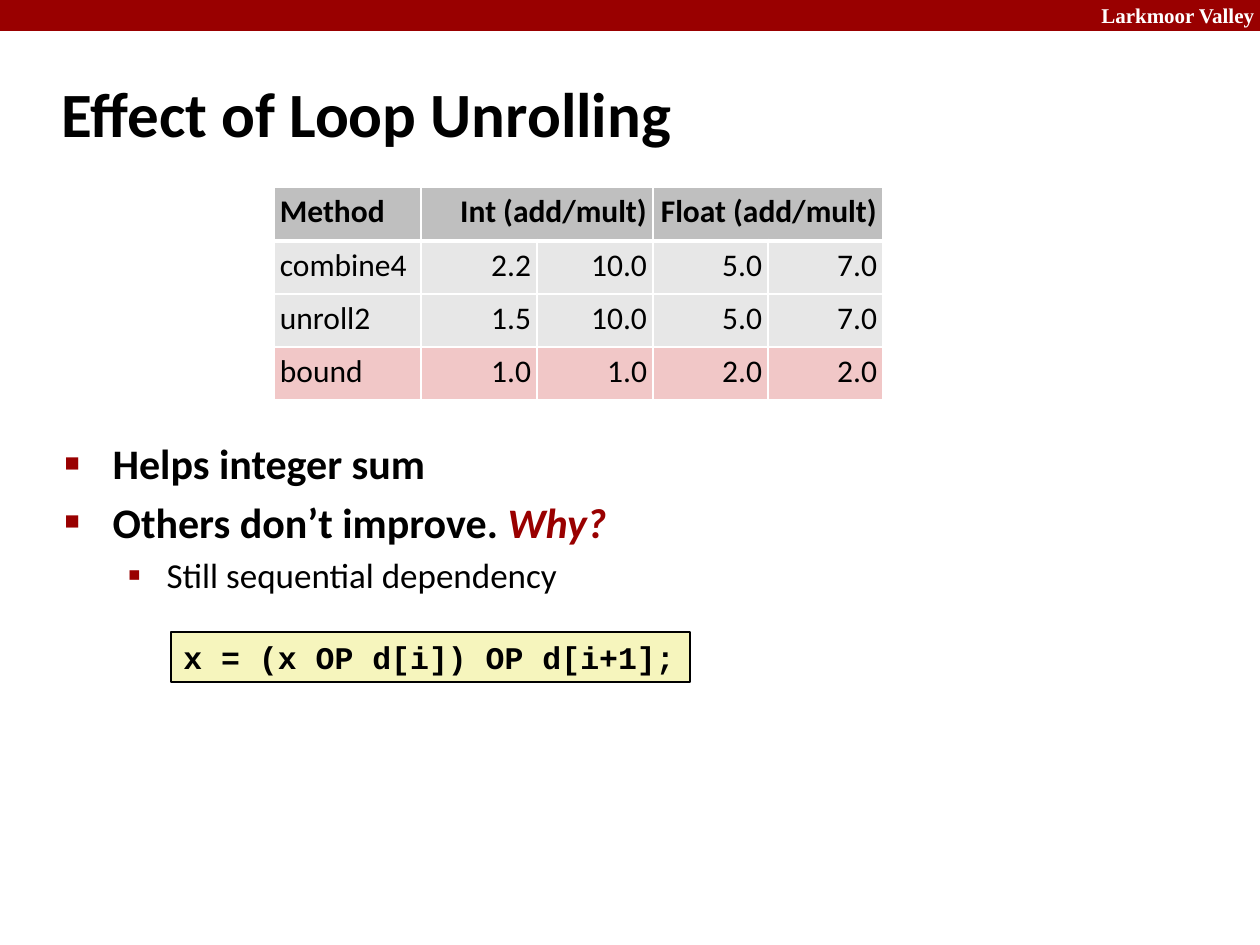
"""Build the slide on the effect of loop unrolling."""
from dataclasses import dataclass

from lxml.etree import SubElement
from pptx import Presentation
from pptx.dml.color import RGBColor
from pptx.enum.shapes import MSO_SHAPE
from pptx.enum.text import MSO_ANCHOR, MSO_AUTO_SIZE, PP_ALIGN
from pptx.oxml import parse_xml
from pptx.oxml.ns import nsdecls, qn
from pptx.util import Emu, Pt

PX = 914400 // 126


@dataclass(frozen=True)
class Theme:
    accent: str = "990000"
    ink: str = "000000"
    paper: str = "FFFFFF"
    header: str = "BFBFBF"
    row: str = "E7E7E7"
    bound: str = "F1C7C7"
    code: str = "F6F5BD"
    sans: str = "Calibri"
    mono: str = "Courier New"
    serif: str = "Times New Roman"
    title_size: int = 36
    point_size: int = 24
    detail_size: int = 20
    table_size: int = 18
    code_size: int = 18
    brand_size: int = 12


THEME = Theme()

BRAND = "Larkmoor Valley"
TITLE = "Effect of Loop Unrolling"
CODE = "x = (x OP d[i]) OP d[i+1];"
HEADINGS = [(0, 0, "Method"), (1, 2, "Int (add/mult)"), (3, 4, "Float (add/mult)")]
ROWS = [
    ("combine4", "2.2", "10.0", "5.0", "7.0"),
    ("unroll2", "1.5", "10.0", "5.0", "7.0"),
    ("bound", "1.0", "1.0", "2.0", "2.0"),
]
POINTS = [
    (0, "Helps integer sum", ""),
    (0, "Others don’t improve. ", "Why?"),
    (1, "Still sequential dependency", ""),
]
LEVELS = [
    dict(size=THEME.point_size, bold=True, margin=48, hang=48, bullet="■", scale=60),
    dict(size=THEME.detail_size, bold=False, margin=102, hang=39, bullet="▪", scale=110),
]
COLUMN_WIDTHS = [147, 116, 116, 115, 115]
ROW_HEIGHTS = [54, 53, 53, 53]


def px(*lengths):
    return [Emu(length * PX) for length in lengths]


def color(code):
    return RGBColor.from_string(code)


def style(para, face, size, ink=THEME.ink, bold=True, align=PP_ALIGN.LEFT):
    para.alignment = align
    font = para.font
    font.name, font.size, font.bold = face, Pt(size), bold
    font.color.rgb = color(ink)


def place(shape, left, top, width, height):
    shape.left, shape.top, shape.width, shape.height = px(left, top, width, height)


def add_rectangle(page, bounds, fill):
    box = page.shapes.add_shape(MSO_SHAPE.RECTANGLE, *px(*bounds))
    box.shadow.inherit = False
    box.fill.solid()
    box.fill.fore_color.rgb = color(fill)
    box.line.fill.background()
    return box


def add_banner(page):
    add_rectangle(page, (0, 0, 1260, 31), THEME.accent)
    box = page.shapes.add_textbox(*px(1089, -4, 180, 38))
    box.text_frame.word_wrap = True
    box.text_frame.text = BRAND
    style(box.text_frame.paragraphs[0], THEME.serif, THEME.brand_size, THEME.paper)


def fill_title(title):
    place(title, 49, 60, 1046, 105)
    frame = title.text_frame
    frame.text = TITLE
    frame.auto_size = MSO_AUTO_SIZE.NONE
    frame.vertical_anchor = MSO_ANCHOR.MIDDLE
    style(frame.paragraphs[0], THEME.sans, THEME.title_size)


def set_bullet(para, level):
    props = para._p.get_or_add_pPr()
    margin, hang = px(level["margin"], level["hang"])
    props.set("marL", str(margin))
    props.set("indent", str(-hang))
    tint = SubElement(props, qn("a:buClr"))
    SubElement(tint, qn("a:srgbClr"), val=THEME.accent)
    SubElement(props, qn("a:buSzPct"), val=str(level["scale"] * 1000))
    SubElement(props, qn("a:buChar"), char=level["bullet"])


def fill_body(body):
    place(body, 52, 431, 1145, 472)
    frame = body.text_frame
    frame.auto_size = MSO_AUTO_SIZE.NONE
    for index, (depth, text, emphasis) in enumerate(POINTS):
        para = frame.add_paragraph() if index else frame.paragraphs[0]
        level = LEVELS[depth]
        para.level = depth
        style(para, THEME.sans, level["size"], bold=level["bold"])
        para.space_before = Pt(level["size"] * 0.2)
        set_bullet(para, level)
        para.add_run().text = text
        if emphasis:
            span = para.add_run()
            span.text = emphasis
            span.font.italic = True
            span.font.color.rgb = color(THEME.accent)


def set_borders(cell, bottom):
    props = cell._tc.get_or_add_tcPr()
    for index, (side, width) in enumerate(zip("LRTB", (1, 1, 1, bottom))):
        props.insert(index, parse_xml(
            f'<a:ln{side} {nsdecls("a")} w="{Pt(width)}"><a:solidFill>'
            f'<a:srgbClr val="{THEME.paper}"/></a:solidFill></a:ln{side}>'))


def fill_cell(cell, text, fill, numeric, header=False):
    cell.text = text
    cell.margin_left, cell.margin_right, cell.margin_top, cell.margin_bottom = px(6, 6, 6, 6)
    cell.fill.solid()
    cell.fill.fore_color.rgb = color(fill)
    set_borders(cell, 3 if header else 1)
    para = cell.text_frame.paragraphs[0]
    para.line_spacing = 0.95
    style(para, THEME.sans, THEME.table_size, bold=header,
          align=PP_ALIGN.RIGHT if numeric else PP_ALIGN.LEFT)


def add_results(page):
    bounds = px(274, 187, sum(COLUMN_WIDTHS), sum(ROW_HEIGHTS))
    table = page.shapes.add_table(len(ROW_HEIGHTS), len(COLUMN_WIDTHS), *bounds).table
    for column, width in zip(table.columns, px(*COLUMN_WIDTHS)):
        column.width = width
    for row, height in zip(table.rows, px(*ROW_HEIGHTS)):
        row.height = height
    for first, last, text in HEADINGS:
        for column in range(first, last + 1):
            fill_cell(table.cell(0, column), text if column == first else "",
                      THEME.header, first > 0, header=True)
        if last > first:
            table.cell(0, first).merge(table.cell(0, last))
    for index, values in enumerate(ROWS, start=1):
        fill = THEME.bound if values[0] == "bound" else THEME.row
        for column, text in enumerate(values):
            fill_cell(table.cell(index, column), text, fill, column > 0)


def add_code(page):
    box = add_rectangle(page, (171, 632, 519, 50), THEME.code)
    box.line.color.rgb = color(THEME.ink)
    box.line.width = Pt(1)
    frame = box.text_frame
    frame.text = CODE
    frame.word_wrap = False
    frame.auto_size = MSO_AUTO_SIZE.SHAPE_TO_FIT_TEXT
    style(frame.paragraphs[0], THEME.mono, THEME.code_size)


def main():
    deck = Presentation()
    deck.slide_width, deck.slide_height = px(1260, 945)
    page = deck.slides.add_slide(deck.slide_layouts[1])
    add_banner(page)
    fill_title(page.shapes.title)
    fill_body(page.placeholders[1])
    add_code(page)
    add_results(page)
    deck.save("out.pptx")


if __name__ == "__main__":
    main()
